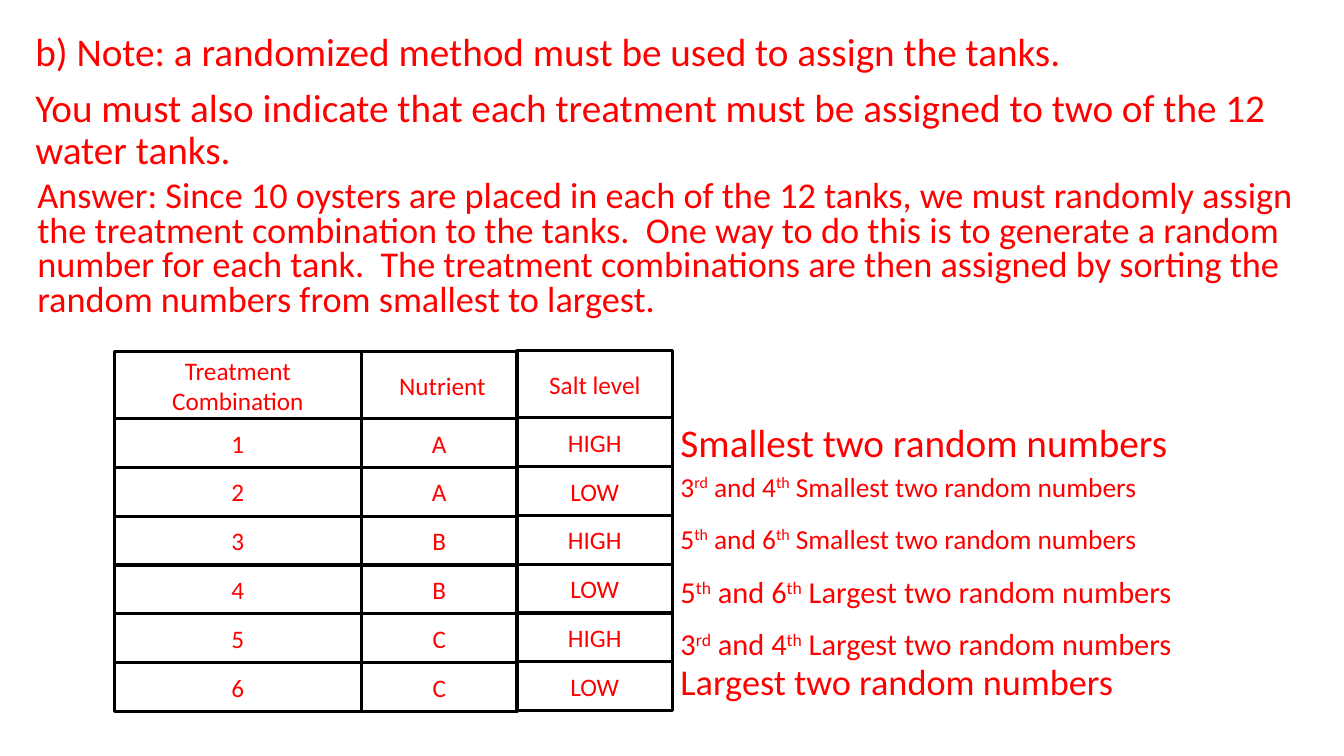
from dataclasses import dataclass

from pptx import Presentation
from pptx.dml.color import RGBColor
from pptx.enum.shapes import MSO_SHAPE
from pptx.enum.text import MSO_ANCHOR, PP_ALIGN
from pptx.slide import Slide
from pptx.text.text import Font
from pptx.util import Cm, Pt

RED = RGBColor(0xFF, 0x00, 0x00)
BLACK = RGBColor(0x00, 0x00, 0x00)
FONT_NAME = "Calibri"

HEADER_HEIGHT = 1.69
ROW_HEIGHT = 1.23

NOTE_LEFT = 16.9
RANK_TOP = 11.94
RANK_PITCH = 1.31


@dataclass(frozen=True)
class TextBlock:
    left: float
    top: float
    width: float
    height: float
    size: float
    line_spacing: float
    paragraphs: tuple[tuple[str, ...], ...]


@dataclass(frozen=True)
class Column:
    left: float
    top: float
    width: float
    heading: str
    values: tuple[str, ...]
    heading_inset: float = 0.25


@dataclass(frozen=True)
class Rank:
    first: str
    first_suffix: str
    second: str
    extreme: str
    size: float


PROSE = (
    TextBlock(0.64, 0.69, 32.59, 3.99, 28, 0.9, (
        ("b) Note: a randomized method must be used to assign the tanks.",),
        ("You must also indicate that each treatment must be assigned "
         "to two of the 12 water tanks.",),
    )),
    TextBlock(0.69, 4.42, 32.59, 3.99, 25.9, 0.8, (
        ("Answer: Since 10 oysters are placed in each of the 12 tanks, we must "
         "randomly assign the treatment combination to the tanks.  One way to do "
         "this is to generate a random number for each tank.  The treatment "
         "combinations are then assigned by sorting the random numbers from "
         "smallest to largest.",),
    )),
)

COLUMNS = (
    Column(2.88, 8.86, 6.23, "Treatment Combination", tuple("123456")),
    Column(9.11, 8.86, 3.92, "Nutrient", tuple("AABBCC"), 0.41),
    Column(13.03, 8.84, 3.92, "Salt level", ("HIGH", "LOW") * 3),
)

RANKS = (
    Rank("3", "rd", "4", "Smallest", 19.6),
    Rank("5", "th", "6", "Smallest", 19.6),
    Rank("5", "th", "6", "Largest", 21.7),
    Rank("3", "rd", "4", "Largest", 21.7),
)


def note(top: float, size: float, line_spacing: float, *pieces: str) -> TextBlock:
    return TextBlock(NOTE_LEFT, top, 13.39, 1.22, size, line_spacing, (pieces,))


def rank_note(index: int, rank: Rank) -> TextBlock:
    return note(
        RANK_TOP + index * RANK_PITCH, rank.size, 0.7,
        rank.first, rank.first_suffix, f" and {rank.second}", "th",
        f" {rank.extreme} two random numbers",
    )


def style_font(font: Font, size: float) -> None:
    font.name = FONT_NAME
    font.size = Pt(size)
    font.color.rgb = RED


def add_text_block(slide: Slide, block: TextBlock) -> None:
    shape = slide.shapes.add_textbox(
        Cm(block.left), Cm(block.top), Cm(block.width), Cm(block.height)
    )
    frame = shape.text_frame
    frame.word_wrap = True
    for index, pieces in enumerate(block.paragraphs):
        paragraph = frame.add_paragraph() if index else frame.paragraphs[0]
        paragraph.line_spacing = block.line_spacing
        paragraph.space_before = Pt(10)
        style_font(paragraph.font, block.size)
        for position, piece in enumerate(pieces):
            run = paragraph.add_run()
            run.text = piece
            if position % 2:
                run.font._element.set("baseline", "30000") if hasattr(
                    run.font, "_element"
                ) else run._r.get_or_add_rPr().set("baseline", "30000")


def add_box(
    slide: Slide, column: Column, top: float, height: float, text: str, inset: float
) -> None:
    shape = slide.shapes.add_shape(
        MSO_SHAPE.RECTANGLE, Cm(column.left), Cm(top), Cm(column.width), Cm(height)
    )
    shape.shadow.inherit = False
    shape.fill.background()
    shape.line.color.rgb = BLACK
    shape.line.width = Pt(2.25)
    frame = shape.text_frame
    frame.word_wrap = True
    frame.vertical_anchor = MSO_ANCHOR.MIDDLE
    frame.margin_left = Cm(inset)
    frame.text = text
    paragraph = frame.paragraphs[0]
    paragraph.alignment = PP_ALIGN.CENTER
    style_font(paragraph.font, 18)


def add_column(slide: Slide, column: Column) -> None:
    add_box(
        slide, column, column.top, HEADER_HEIGHT, column.heading, column.heading_inset
    )
    first_top = column.top + HEADER_HEIGHT
    for index, value in enumerate(column.values):
        add_box(slide, column, first_top + index * ROW_HEIGHT, ROW_HEIGHT, value, 0.25)


def main() -> None:
    presentation = Presentation()
    presentation.slide_width = Cm(33.87)
    presentation.slide_height = Cm(19.05)
    slide = presentation.slides.add_slide(presentation.slide_layouts[6])
    for block in PROSE:
        add_text_block(slide, block)
    for column in COLUMNS:
        add_column(slide, column)
    add_text_block(slide, note(10.64, 28, 0.8, "Smallest two random numbers"))
    for index, rank in enumerate(RANKS):
        add_text_block(slide, rank_note(index, rank))
    add_text_block(slide, note(16.71, 25.9, 0.8, "Largest two random numbers"))
    presentation.save("out.pptx")


if __name__ == "__main__":
    main()
